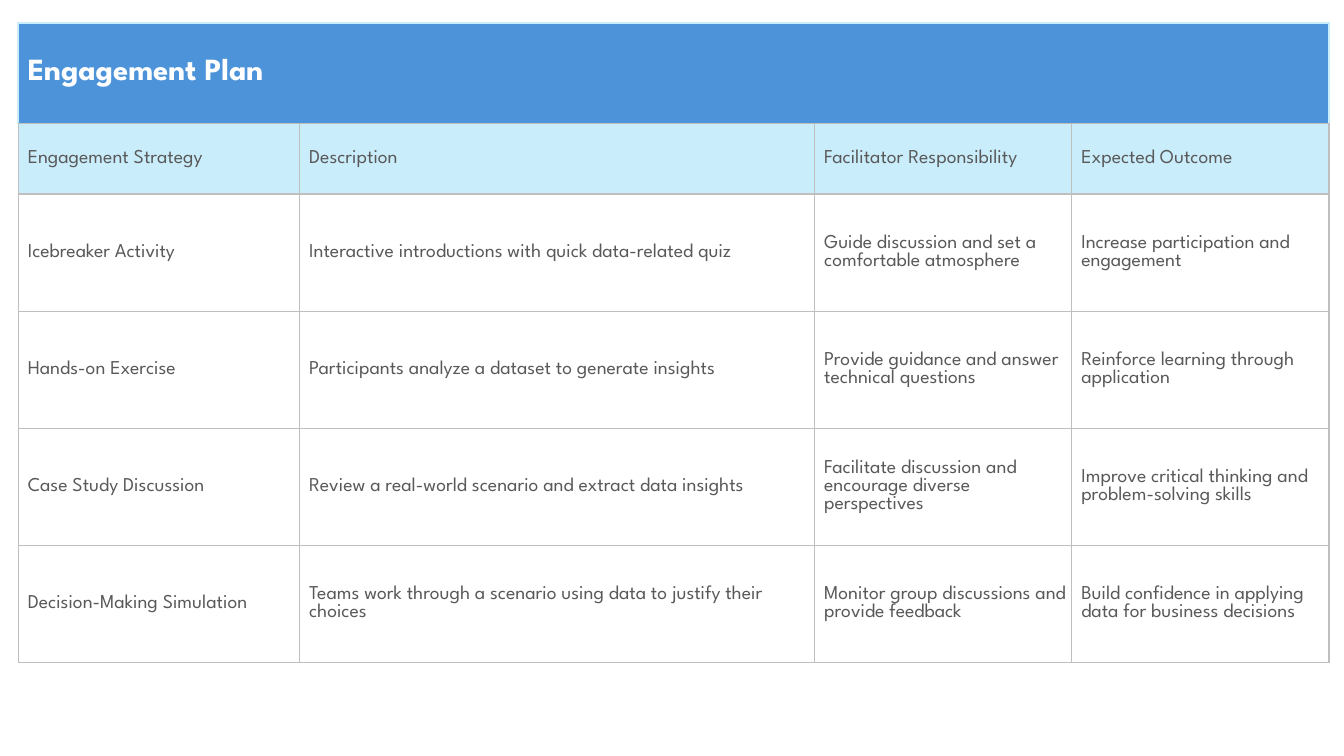
from lxml import etree
from pptx import Presentation, util as u
from pptx.dml.color import RGBColor
from pptx.enum import text
from pptx.oxml.ns import qn

TITLE = "Engagement Plan"
HEADINGS = ["Engagement Strategy", "Description", "Facilitator Responsibility", "Expected Outcome"]
STRATEGIES = [
    ("Icebreaker Activity", "Interactive introductions with quick data-related quiz",
     "Guide discussion and set a comfortable atmosphere", "Increase participation and engagement"),
    ("Hands-on Exercise", "Participants analyze a dataset to generate insights",
     "Provide guidance and answer technical questions", "Reinforce learning through application"),
    ("Case Study Discussion", "Review a real-world scenario and extract data insights",
     "Facilitate discussion and encourage diverse perspectives",
     "Improve critical thinking and problem-solving skills"),
    ("Decision-Making Simulation", "Teams work through a scenario using data to justify their choices",
     "Monitor group discussions and provide feedback",
     "Build confidence in applying data for business decisions"),
]

BLUE = RGBColor(0x4D, 0x93, 0xD9)
PALE = RGBColor(0xCA, 0xED, 0xFB)
WHITE = RGBColor(0xFF, 0xFF, 0xFF)
INK = RGBColor(0x59, 0x59, 0x59)
GRID = RGBColor(0xBF, 0xBF, 0xBF)

COLUMN_WIDTHS = [7.09, 12.98, 6.48, 6.48]
ROW_HEIGHTS = [2.54, 1.78] + [2.95] * len(STRATEGIES)
CELL_FORMAT = {
    "vertical_anchor": text.MSO_ANCHOR.MIDDLE,
    "margin_left": u.Cm(0.24), "margin_top": u.Cm(0.02),
    "margin_right": u.Cm(0.02), "margin_bottom": u.Cm(0),
}
TITLE_FONT = {"name": "League Spartan", "size": u.Pt(22), "bold": True}
BODY_FONT = {"name": "League Spartan", "size": u.Pt(14), "bold": False}
GRID_BORDERS = {side: (GRID, 1) for side in "LRTB"}
TITLE_BORDERS = {**{side: (PALE, 1.5) for side in "LRT"}, "B": (GRID, 1)}


def set_format(target, values):
    for name, value in values.items():
        setattr(target, name, value)


def set_borders(cell, borders):
    """Put the side lines first in the cell properties, as the schema asks."""
    properties = cell._tc.get_or_add_tcPr()
    for place, (side, (color, points)) in enumerate(borders.items()):
        line = etree.Element(qn(f"a:ln{side}"), w=str(int(u.Pt(points))))
        fill = etree.SubElement(line, qn("a:solidFill"))
        etree.SubElement(fill, qn("a:srgbClr"), val=str(color))
        properties.insert(place, line)


def style_cell(cell, wording, font, color, fill, borders):
    set_format(cell, CELL_FORMAT)
    if fill is None:
        cell.fill.background()
    else:
        cell.fill.solid()
        cell.fill.fore_color.rgb = fill
    set_borders(cell, borders)
    para = cell.text_frame.paragraphs[0]
    para.alignment = text.PP_ALIGN.LEFT
    set_format(para.font, font)
    if wording:
        span = para.add_run()
        span.text = wording
        set_format(span.font, font)
        span.font.color.rgb = color


deck = Presentation()
set_format(deck, {"slide_width": u.Cm(33.87), "slide_height": u.Cm(19.05)})
page = deck.slides.add_slide(deck.slide_layouts[6])

title_row = [TITLE] + [""] * (len(HEADINGS) - 1)
rows = [title_row, HEADINGS, *STRATEGIES]
styles = [(TITLE_FONT, WHITE, BLUE, TITLE_BORDERS), (BODY_FONT, INK, PALE, GRID_BORDERS)]
styles += [(BODY_FONT, INK, None, GRID_BORDERS)] * len(STRATEGIES)

plan = page.shapes.add_table(
    len(rows), len(HEADINGS), u.Cm(0.46), u.Cm(0.57),
    u.Cm(sum(COLUMN_WIDTHS)), u.Cm(sum(ROW_HEIGHTS))).table
set_format(plan, {"first_row": False, "horz_banding": False})
for column, width in zip(plan.columns, COLUMN_WIDTHS):
    column.width = u.Cm(width)
for row, height, wordings, style in zip(plan.rows, ROW_HEIGHTS, rows, styles):
    row.height = u.Cm(height)
    for cell, wording in zip(row.cells, wordings):
        style_cell(cell, wording, *style)
plan.cell(0, 0).merge(plan.cell(0, len(HEADINGS) - 1))

deck.save("out.pptx")
